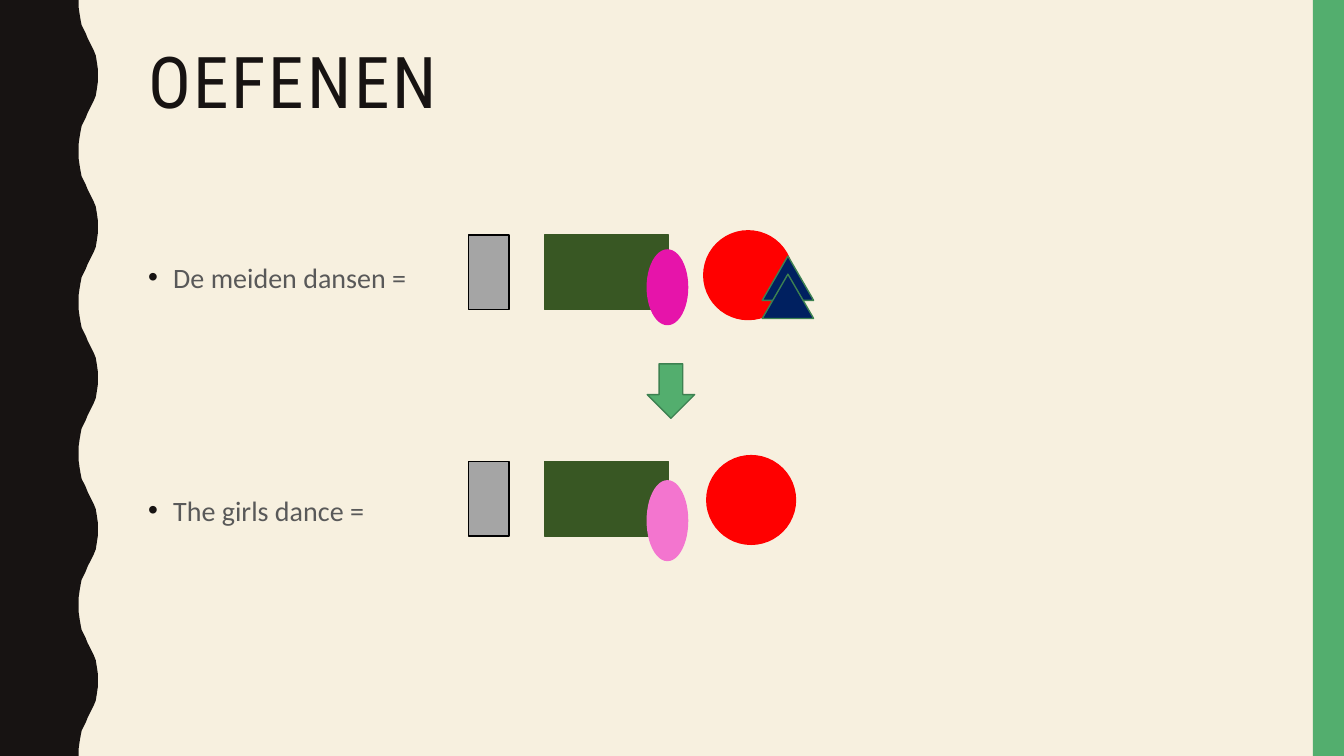
from lxml.etree import SubElement
from pptx import Presentation
from pptx.dml.color import RGBColor
from pptx.enum.shapes import MSO_SHAPE
from pptx.oxml.ns import qn
from pptx.util import Pt

PX = 9144
WIDTH, HEIGHT = 1333, 750
COLORS = {
    "cream": "F7F0DF", "ink": "171312", "green": "53AE6E", "edge": "3D8151",
    "text": "595959", "forest": "385723", "gray": "A5A5A5", "black": "000000",
    "magenta": "E614AA", "pink": "F375CF", "red": "FF0000", "navy": "002060",
}
HALF_WAVE = [
    (78, 0), (78, 7), (79, 14), (80, 20), (81, 25), (83, 29), (85, 33), (87, 38),
    (89, 42), (91, 46), (93, 50), (95, 55), (96, 61), (97, 68), (97, 75),
]
PERIOD = 150


def color(name):
    return RGBColor.from_string(COLORS[name])


def paint(shape, fill, line=None):
    shape.shadow.inherit = False
    shape.fill.solid()
    shape.fill.fore_color.rgb = color(fill)
    if line:
        shape.line.color.rgb = color(line)
        shape.line.width = Pt(1)
    else:
        shape.line.fill.background()


def add_shape(slide, kind, box, fill, line=None):
    shape = slide.shapes.add_shape(kind, *(n * PX for n in box))
    paint(shape, fill, line)


def add_text(slide, box, lines, font, size, ink, spacing):
    frame = slide.shapes.add_textbox(*(n * PX for n in box)).text_frame
    frame.word_wrap = True
    frame.text = "\n".join(lines)
    for para in frame.paragraphs:
        para.line_spacing = spacing
        style = para.runs[0].font
        style.name = font
        style.size = Pt(size)
        style.color.rgb = color(ink)
    return frame.paragraphs


def add_bullet(para, indent):
    props = para._p.get_or_add_pPr()
    props.set("marL", str(indent * PX))
    props.set("indent", str(-indent * PX))
    tint = SubElement(props, qn("a:buClr"))
    SubElement(tint, qn("a:srgbClr"), val=COLORS["ink"])
    SubElement(props, qn("a:buFont"), typeface="Arial")
    SubElement(props, qn("a:buChar"), char="•")


def add_frame(slide, box):
    left, top, width, height = box
    slide.background.fill.solid()
    slide.background.fill.fore_color.rgb = color("cream")
    wave = HALF_WAVE + [(x, PERIOD - y) for x, y in HALF_WAVE[-2::-1]]
    edge = [
        (left + x, top + start + y)
        for start in range(0, height, PERIOD) for x, y in wave
    ]
    builder = slide.shapes.build_freeform(left, top, scale=PX)
    builder.add_line_segments(edge + [(left, top + height)], close=True)
    paint(builder.convert_to_shape(), "ink")
    bar = 31
    add_shape(slide, MSO_SHAPE.RECTANGLE,
              (left + width - bar, top, bar, height), "green")


def add_title(slide, box):
    para = add_text(slide, box, ["OEFENEN"], "Roboto Condensed", 51, "ink", 0.9)[0]
    para.runs[0]._r.get_or_add_rPr().set("spc", "200")


def add_body(slide, box):
    lines = ["De meiden dansen =", "The girls dance ="]
    paras = add_text(slide, box, lines, "Calibri", 20, "text", 1.1)
    for para, gap in zip(paras, (7, 140)):
        para.space_before = Pt(gap)
        add_bullet(para, 25)


def add_row(slide, box, oval, tint, disc, peaks=()):
    left, top, height = box
    add_shape(slide, MSO_SHAPE.RECTANGLE, (left, top, 40, height), "gray", "black")
    add_shape(slide, MSO_SHAPE.RECTANGLE,
              (left + 75, top, 123, height), "forest", "forest")
    drop, tall = oval
    add_shape(slide, MSO_SHAPE.OVAL, (left + 177, top + drop, 40, tall), tint, tint)
    x, y = disc
    add_shape(slide, MSO_SHAPE.FLOWCHART_CONNECTOR,
              (left + x, top + y, 88, 88), "red", "red")
    for y in peaks:
        add_shape(slide, MSO_SHAPE.ISOSCELES_TRIANGLE,
                  (left + 291, top + y, 51, 44), "navy", "edge")


def main():
    deck = Presentation()
    deck.slide_width = WIDTH * PX
    deck.slide_height = HEIGHT * PX
    slide = deck.slides.add_slide(deck.slide_layouts[6])
    add_frame(slide, (0, 0, WIDTH, HEIGHT))
    add_title(slide, (137, 42, 1113, 163))
    add_body(slide, (137, 250, 1113, 477))
    add_shape(slide, MSO_SHAPE.DOWN_ARROW, (642, 361, 47, 54), "green", "edge")
    add_row(slide, (465, 233, 74), (15, 74), "magenta", (233, -4), (21, 39))
    add_row(slide, (465, 458, 74), (19, 79), "pink", (236, -6))
    deck.save("out.pptx")


if __name__ == "__main__":
    main()
